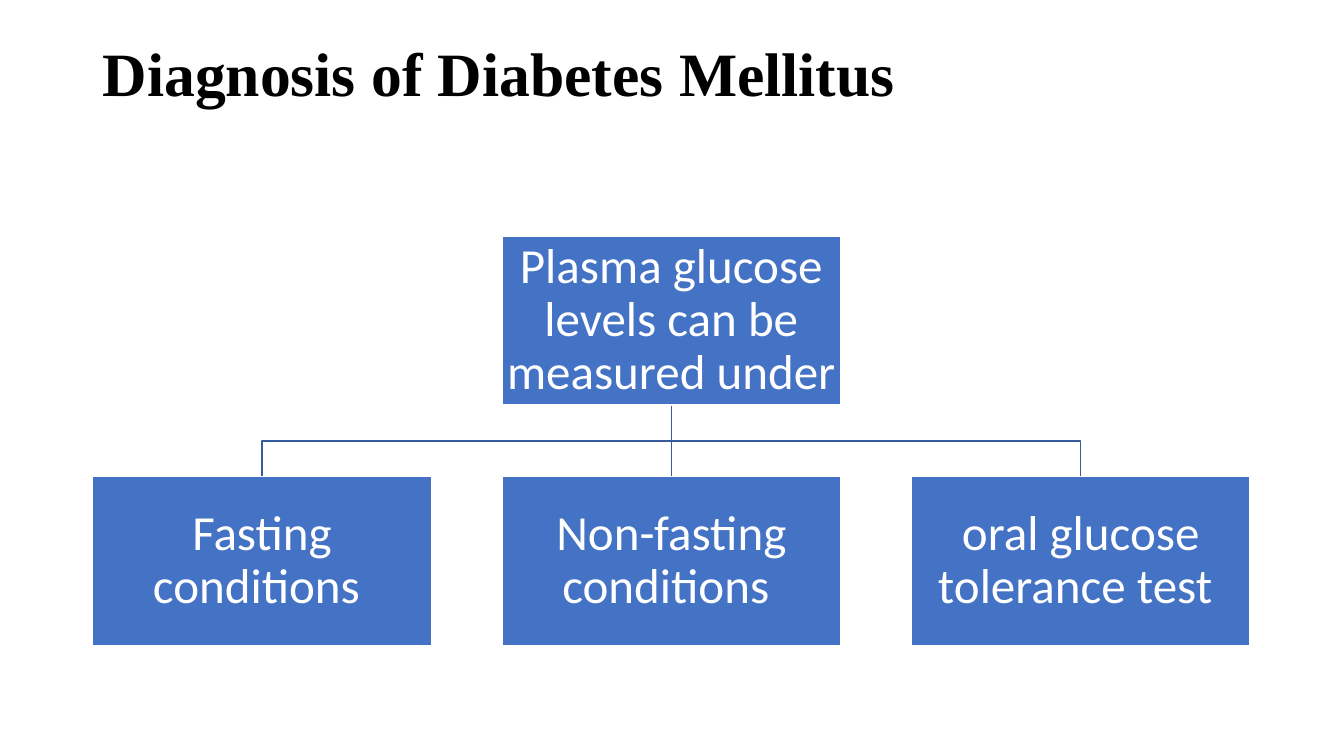
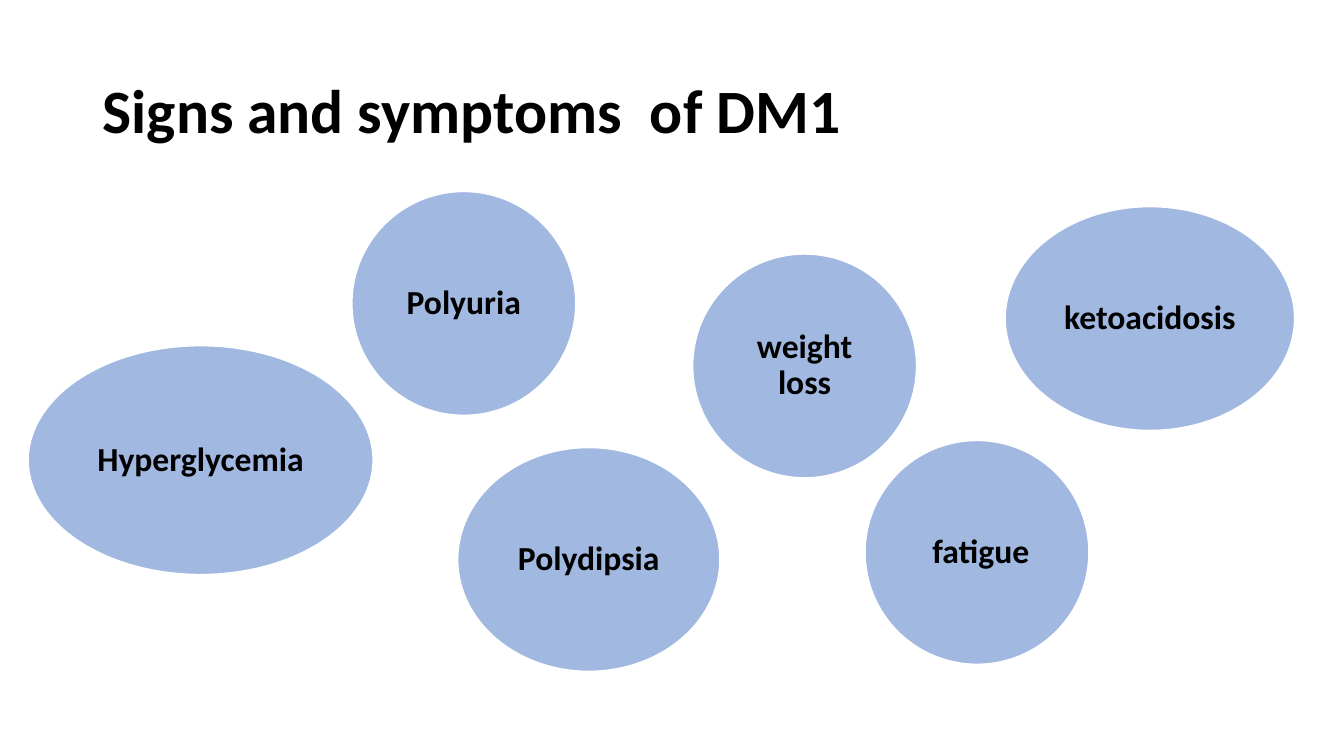
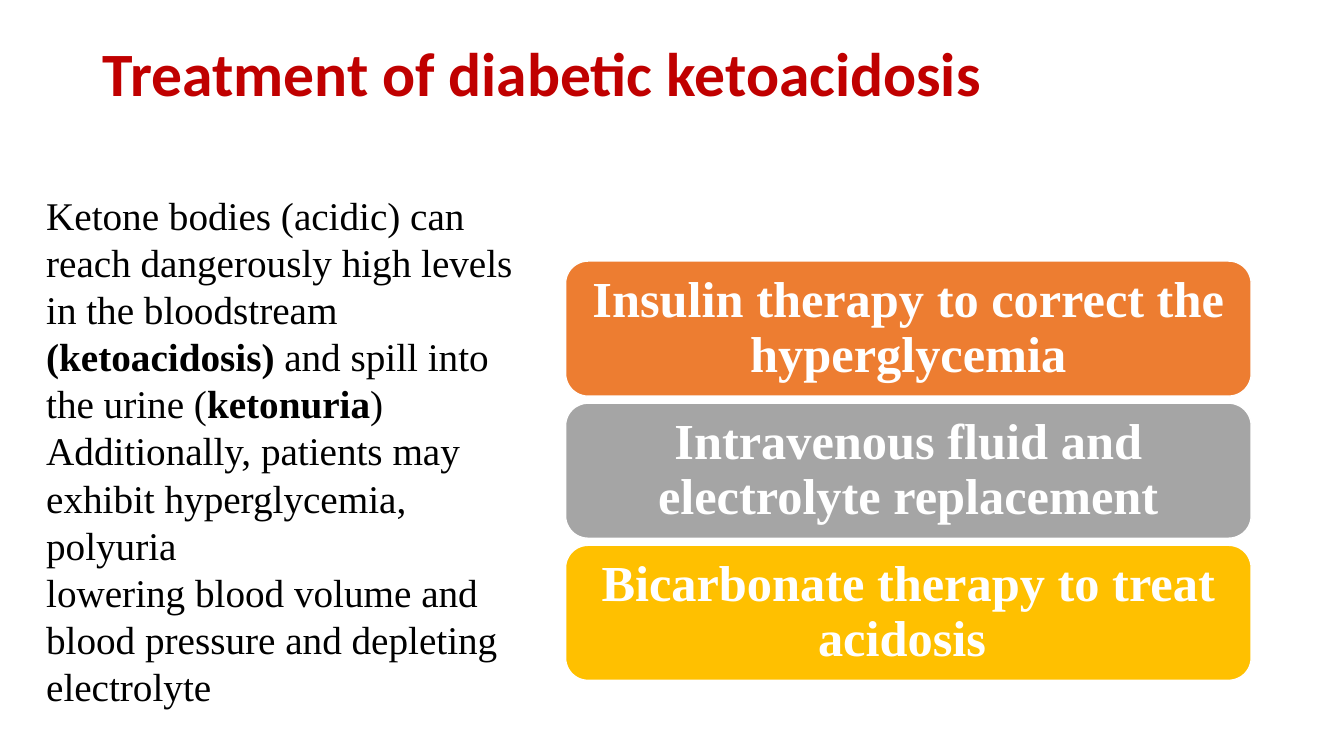
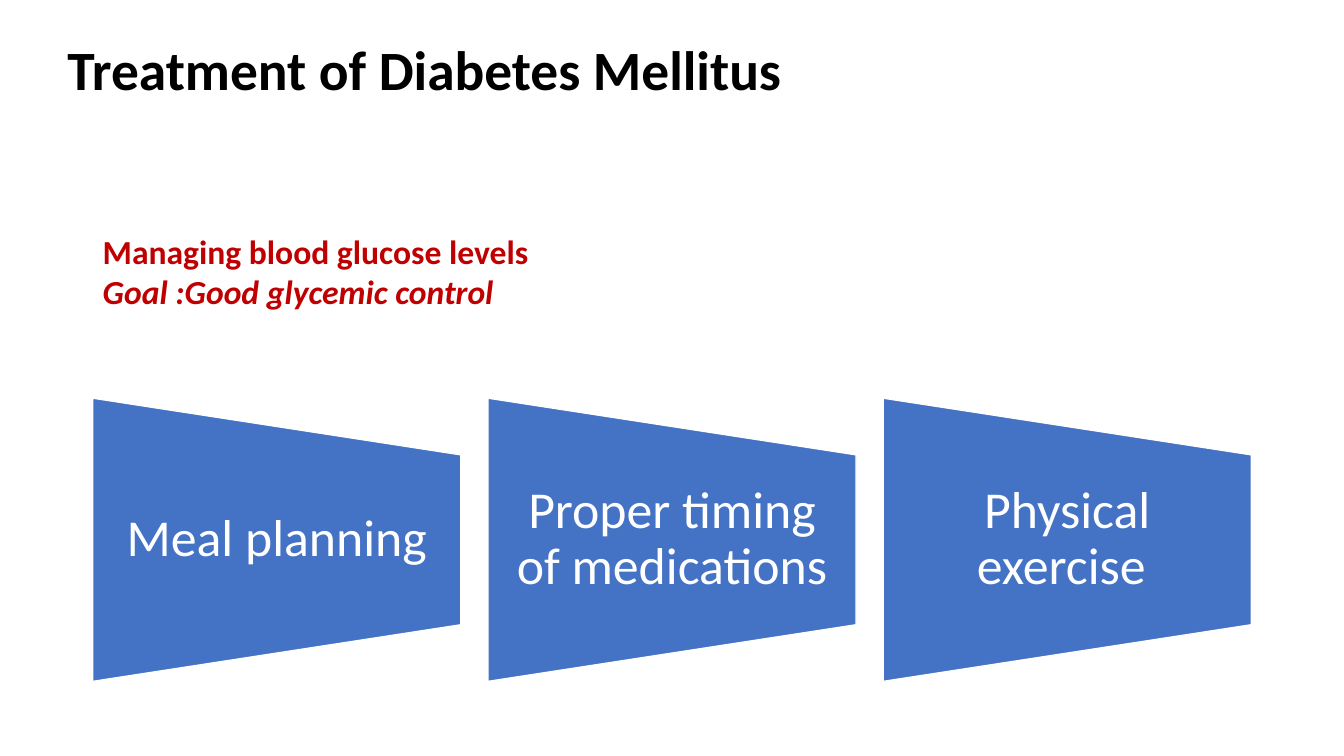
"""Build four slides on the diagnosis and treatment of diabetes mellitus."""
from lxml import etree
from pptx import Presentation
from pptx import util as u
from pptx.dml.color import RGBColor
from pptx.enum import shapes, text
from pptx.oxml.ns import qn

PX = 9144
SANS, SERIF = "Calibri", "Times New Roman"
BLACK = RGBColor(0x00, 0x00, 0x00)
WHITE = RGBColor(0xFF, 0xFF, 0xFF)
BLUE = RGBColor(0x44, 0x72, 0xC4)
NAVY = RGBColor(0x36, 0x5B, 0x9D)
RED = RGBColor(0xC0, 0x00, 0x00)
ORANGE = RGBColor(0xED, 0x7D, 0x31)
GRAY = RGBColor(0xA5, 0xA5, 0xA5)
GOLD = RGBColor(0xFF, 0xC0, 0x00)

LEFT = 92
TITLE_BOX = (LEFT, 40, 1150, 145)
TITLE = dict(name=SANS, size=44, color=BLACK, bold=True)
NODE = dict(name=SANS, size=35, color=WHITE)
SYMPTOM = dict(name=SANS, size=24, color=BLACK, bold=True)
CARD = dict(name=SERIF, size=36, color=WHITE, bold=True)
BODY = dict(name=SERIF, size=28, color=BLACK)
STEP = dict(name=SANS, size=37, color=WHITE)
GOAL = dict(name=SANS, size=24, color=RED, bold=True)

ROOT = "Plasma glucose levels can be measured under "
TESTS = ["Fasting conditions ", "Non-fasting conditions ", "oral glucose tolerance test "]
SYMPTOMS = [
    ("Hyperglycemia", (28, 343, 342, 227)),
    ("Polyuria", (349, 190, 222, 222)),
    ("Polydipsia", (454, 444, 260, 222)),
    ("weight loss", (687, 252, 222, 222)),
    (" fatigue", (858, 437, 222, 222)),
    ("ketoacidosis", (997, 205, 287, 222)),
]
CARDS = [
    ("Insulin therapy to correct the hyperglycemia", ORANGE),
    ("Intravenous fluid and electrolyte replacement", GRAY),
    ("Bicarbonate therapy to treat acidosis ", GOLD),
]
KETOSIS = [
    [("Ketone bodies (acidic) can reach dangerously high levels in the bloodstream ", {}),
     ("(ketoacidosis) ", dict(bold=True)),
     ("and spill into the urine (", {}),
     ("ketonuria", dict(bold=True)),
     (")", {})],
    [("Additionally, patients may exhibit hyperglycemia, polyuria", {})],
    [("lowering blood volume and blood pressure and depleting electrolyte", {})],
]
GOALS = [
    [("Managing blood glucose levels", {})],
    [("Goal :Good glycemic control", dict(italic=True))],
]
STEPS = ["Meal planning", "Proper timing of medications", "Physical exercise "]


def px(*values):
    return [u.Emu(round(v * PX)) for v in values]


def write(sp, paragraphs, style, insets=(10, 5), align=None, anchor="TOP", spacing=None):
    """Fill a shape with paragraphs, each a list of (text, format) runs."""
    tf = sp.text_frame
    tf.word_wrap = True
    tf.vertical_anchor = getattr(text.MSO_ANCHOR, anchor)
    tf.margin_left, tf.margin_top = tf.margin_right, tf.margin_bottom = px(*insets)
    for i, runs in enumerate(paragraphs):
        p = tf.add_paragraph() if i else tf.paragraphs[0]
        p.alignment, p.line_spacing = align, spacing
        for words, extra in runs:
            r = p.add_run()
            r.text = words
            for key, value in {**style, **extra}.items():
                if key == "color":
                    r.font.color.rgb = value
                else:
                    setattr(r.font, key, u.Pt(value) if key == "size" else value)


def add_label(sp, words, style, insets):
    write(sp, [[(words, {})]], style, insets, text.PP_ALIGN.CENTER, "MIDDLE", 0.9)


def add_text(s, box, paragraphs, style, **layout):
    write(s.shapes.add_textbox(*px(*box)), paragraphs, style, **layout)


def set_line(sp, color):
    sp.line.color.rgb = color
    sp.line.width = u.Pt(1)


def add_shape(s, kind, box, fill, alpha=None):
    sp = s.shapes.add_shape(getattr(shapes.MSO_SHAPE, kind), *px(*box))
    sp.shadow.inherit = False
    sp.fill.solid()
    sp.fill.fore_color.rgb = fill
    if alpha:
        clr = sp.fill._xPr.find(".//" + qn("a:srgbClr"))
        etree.SubElement(clr, qn("a:alpha")).set("val", str(alpha * 1000))
    set_line(sp, WHITE)
    return sp


def add_line(s, *ends):
    cn = s.shapes.add_connector(shapes.MSO_CONNECTOR.STRAIGHT, *px(*ends))
    set_line(cn, NAVY)
    etree.SubElement(cn._element.spPr, qn("a:effectLst"))


def add_branch(s, x0, y0, x1, y1):
    """Draw an open line that goes down, across and down again."""
    bend = (y0 + y1) / 2
    fb = s.shapes.build_freeform(*px(x0, y0))
    fb.add_line_segments([px(x0, bend), px(x1, bend), px(x1, y1)], close=False)
    sp = fb.convert_to_shape()
    sp.shadow.inherit = False
    sp.fill.background()
    set_line(sp, NAVY)


def new_slide(prs, title, box=TITLE_BOX, anchor="TOP", **style):
    s = prs.slides.add_slide(prs.slide_layouts[6])
    add_text(s, box, [[(title, {})]], {**TITLE, **style},
             insets=(10, 3), anchor=anchor, spacing=0.9)
    return s


def diagnosis(prs):
    s = new_slide(prs, "Diagnosis of Diabetes Mellitus", name=SERIF)
    w, h, gap, root_top, top = 336, 168, 70, 234, 473
    lefts = [LEFT + i * (w + gap) for i in range(len(TESTS))]
    first, middle, last = [x + w / 2 for x in lefts]
    root_end = root_top + h
    add_branch(s, middle, root_end, last, top)
    add_line(s, middle, root_end, middle, top)
    add_branch(s, middle, root_end, first, top)
    nodes = [(ROOT, lefts[1], root_top)] + [(t, x, top) for t, x in zip(TESTS, lefts)]
    for words, x, y in nodes:
        add_label(add_shape(s, "RECTANGLE", (x, y, w, h), BLUE), words, NODE, (2, 2))


def symptoms(prs):
    s = new_slide(prs, "Signs and symptoms  of DM1", anchor="MIDDLE")
    for words, box in SYMPTOMS:
        add_label(add_shape(s, "OVAL", box, BLUE, alpha=50), words, SYMPTOM, (12, 3))


def ketoacidosis(prs):
    s = new_slide(prs, "Treatment of diabetic ketoacidosis", color=RED)
    for i, (words, fill) in enumerate(CARDS):
        sp = add_shape(s, "ROUNDED_RECTANGLE", (561, 259 + 141 * i, 680, 134), fill)
        add_label(sp, words, CARD, (15, 7))
    add_text(s, (36, 185, 500, 528), KETOSIS, BODY)


def treatment(prs):
    s = new_slide(prs, "Treatment of Diabetes Mellitus", (57, 39, 1150, 97), size=39.6)
    w, h, gap, top, text_h = 365, 281, 27, 395, 168
    mid = top + h / 2
    for i, words in enumerate(STEPS):
        x = LEFT + i * (w + gap)
        box = (x + (w - h) / 2, mid - w / 2, h, w)
        add_shape(s, "FLOWCHART_MANUAL_OPERATION", box, BLUE).rotation = 270
        label = s.shapes.add_textbox(*px(x, mid - text_h / 2, w, text_h))
        add_label(label, words, STEP, (26, 0))
    add_text(s, (LEFT, 224, 721, 162), GOALS, GOAL)


def main():
    prs = Presentation()
    prs.slide_width, prs.slide_height = px(1333, 750)
    for build in (diagnosis, symptoms, ketoacidosis, treatment):
        build(prs)
    prs.save("out.pptx")


if __name__ == "__main__":
    main()
